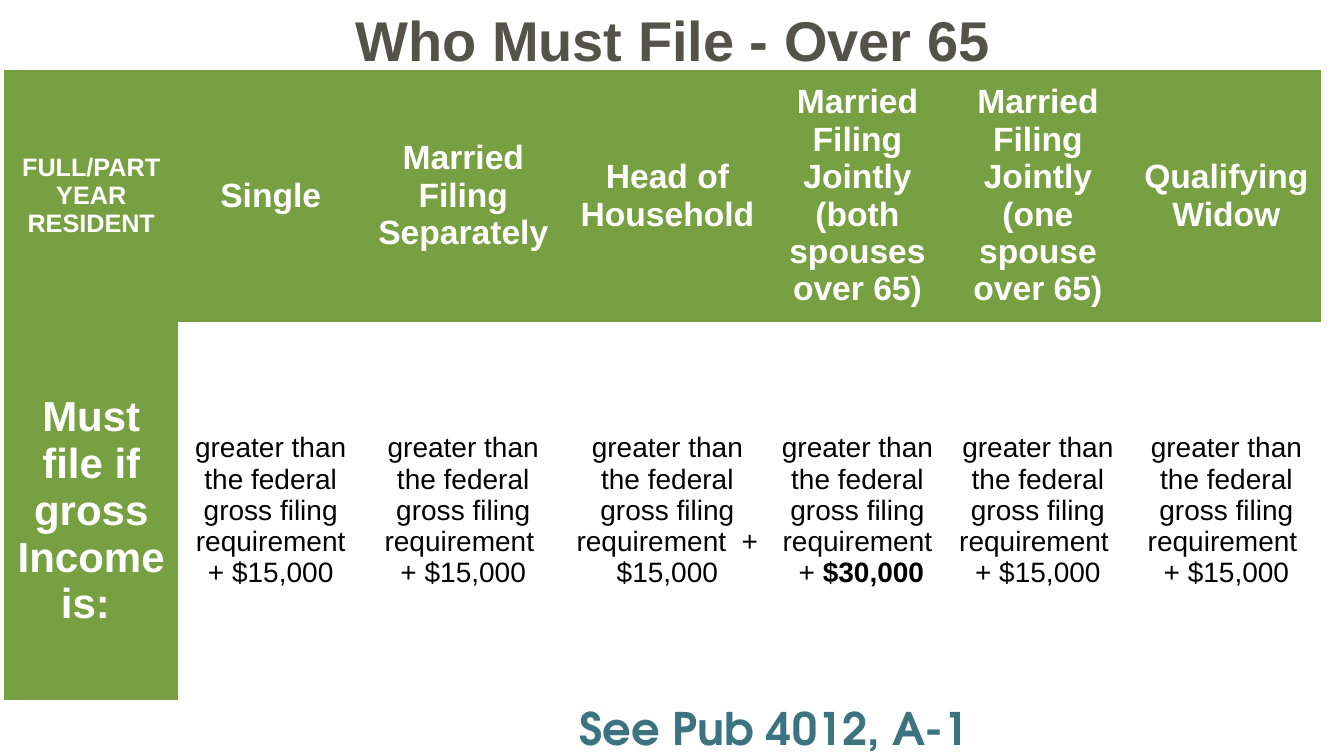
from pptx import Presentation
from pptx.dml.color import RGBColor
from pptx.enum import text
from pptx.oxml.ns import qn
from pptx.util import Inches, Pt

GREEN = RGBColor(0x77, 0xA0, 0x42)
WHITE = RGBColor(0xFF, 0xFF, 0xFF)
BLACK = RGBColor(0x00, 0x00, 0x00)
GRAY = RGBColor(0x54, 0x53, 0x4A)
TEAL = RGBColor(0x3C, 0x73, 0x81)
NO_STYLE_NO_GRID = "{2D5ABB26-0587-4C30-8999-92F81FD0307C}"


def style(paragraph, size, color, bold=True, name="Arial", align=text.PP_ALIGN.CENTER):
    paragraph.alignment = align
    font = paragraph.font
    font.size, font.bold, font.name = Pt(size), bold, name
    font.color.rgb = color


def add_text(left, top, width, height, words):
    frame = slide.shapes.add_textbox(
        Inches(left), Inches(top), Inches(width), Inches(height)).text_frame
    frame.word_wrap = True
    frame.text = words
    return frame


presentation = Presentation()
presentation.slide_width = Inches(13.33)
presentation.slide_height = Inches(7.5)
slide = presentation.slides.add_slide(presentation.slide_layouts[6])

# Title
title = add_text(0.67, 0, 12, 0.77, "Who Must File - Over 65")
title.vertical_anchor = text.MSO_ANCHOR.MIDDLE
style(title.paragraphs[0], 40, GRAY)

# Filing table: status, extra income allowed, column width
row_heads = ["FULL/PART YEAR RESIDENT", "Must file if gross Income is: "]
statuses = [
    ("Single", "$15,000", 1.83),
    ("Married Filing Separately", "$15,000", 1.99),
    ("Head of Household", "$15,000", 2.06),
    ("Married Filing Jointly (both spouses over 65)", "$30,000", 1.71),
    ("Married Filing Jointly (one spouse over 65)", "$15,000", 1.87),
    ("Qualifying Widow", "$15,000", 1.87),
]
widths = [1.73] + [width for _, _, width in statuses]
heights = [2.35, 3.75]
table = slide.shapes.add_table(
    len(heights), len(widths), Inches(0.04), Inches(0.69),
    Inches(sum(widths)), Inches(sum(heights))).table
table._tbl.tblPr.find(qn("a:tableStyleId")).text = NO_STYLE_NO_GRID
for column, width in zip(table.columns, widths):
    column.width = Inches(width)
for row, height in zip(table.rows, heights):
    row.height = Inches(height)

# Headings
for row, (words, size) in enumerate(zip(row_heads, [18, 30])):
    table.cell(row, 0).text = words
    style(table.cell(row, 0).text_frame.paragraphs[0], size, WHITE)

# Statuses and thresholds
for column, (status, amount, _) in enumerate(statuses, start=1):
    table.cell(0, column).text = status
    style(table.cell(0, column).text_frame.paragraphs[0], 24, WHITE)
    paragraph = table.cell(1, column).text_frame.paragraphs[0]
    gap = " " if status == "Single" else "  "
    paragraph.add_run().text = f"greater than the federal gross filing requirement{gap}+ "
    amount_run = paragraph.add_run()
    amount_run.text = amount
    style(paragraph, 20, BLACK, bold=False)
    if amount == "$30,000":
        amount_run.font.bold = True

# Cell fills
for row in range(len(heights)):
    for column in range(len(widths)):
        cell = table.cell(row, column)
        cell.vertical_anchor = text.MSO_ANCHOR.MIDDLE
        cell.fill.solid()
        cell.fill.fore_color.rgb = GREEN if row == 0 or column == 0 else WHITE

# Reference
reference = add_text(5.65, 6.9, 5.32, 0.64, "See Pub 4012, A-1")
style(reference.paragraphs[0], 32, TEAL, name="TeX Gyre Adventor", align=text.PP_ALIGN.LEFT)

presentation.save("out.pptx")
